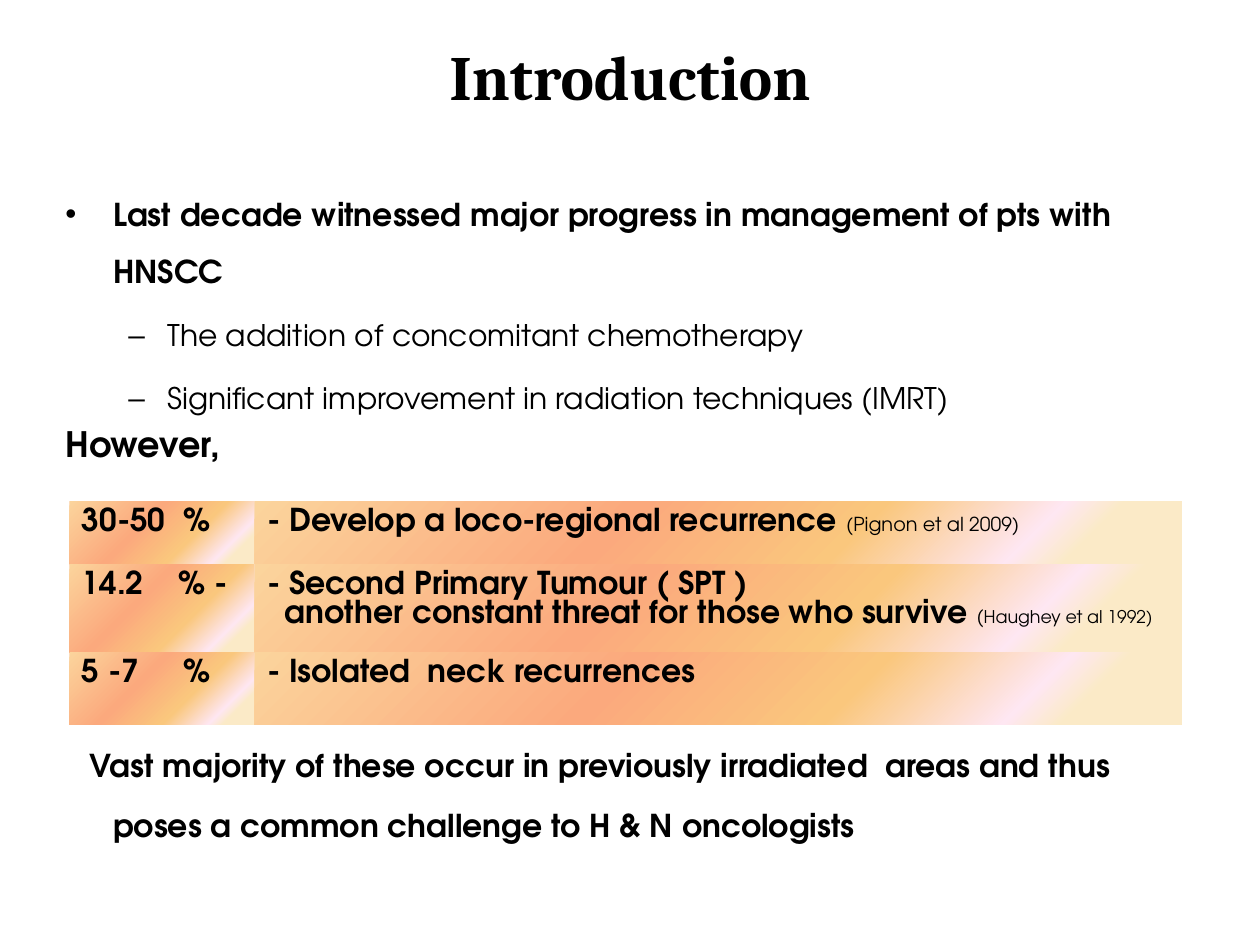
from dataclasses import dataclass

from lxml.etree import SubElement
from pptx import Presentation
from pptx.dml.color import RGBColor
from pptx.enum.text import MSO_ANCHOR, PP_ALIGN
from pptx.oxml.ns import qn
from pptx.util import Inches, Pt

BODY_FONT = "TeX Gyre Adventor"
TITLE_FONT = "Cambria"
TEXT_COLOUR = "000000"
NO_TABLE_STYLE = "{2D5ABB26-0587-4C30-8999-92F81FD0307C}"
GRADIENT_STOPS = [(12, "FBEAC7"), (18, "FEE7F2"), (36, "FAC77D"),
                  (61, "FBA97D"), (100, "FBD49C"), (100, "FEE7F2")]


@dataclass
class Piece:
    text: str
    size: float = 18
    bold: bool = True
    font: str = BODY_FONT
    tracking: float = 0


@dataclass
class Line:
    pieces: list[Piece]
    margin: float = 0
    indent: float = 0
    spacing: float = 1
    before: float = 0
    bullet: str = ""
    centred: bool = False


def colour(hex_code: str) -> RGBColor:
    return RGBColor.from_string(hex_code)


def write_line(paragraph, line: Line) -> None:
    properties = paragraph._p.get_or_add_pPr()
    properties.set("marL", str(Inches(line.margin)))
    properties.set("indent", str(Inches(line.indent)))
    if line.bullet:
        SubElement(properties, qn("a:buFont"), typeface="Arial")
        SubElement(properties, qn("a:buChar"), char=line.bullet)
    else:
        SubElement(properties, qn("a:buNone"))
    paragraph.line_spacing = line.spacing
    paragraph.space_before = Pt(line.before)
    paragraph.alignment = PP_ALIGN.CENTER if line.centred else PP_ALIGN.LEFT
    for piece in line.pieces:
        run = paragraph.add_run()
        run.text = piece.text
        run.font.name = piece.font
        run.font.size = Pt(piece.size)
        run.font.bold = piece.bold
        run.font.color.rgb = colour(TEXT_COLOUR)
        if piece.tracking:
            run._r.get_or_add_rPr().set("spc", str(int(piece.tracking * 100)))


def write_lines(text_frame, lines: list[Line]) -> None:
    for number, line in enumerate(lines):
        paragraph = text_frame.add_paragraph() if number else text_frame.paragraphs[0]
        write_line(paragraph, line)


def add_text(slide, left: float, top: float, width: float, height: float,
             lines: list[Line], anchor=MSO_ANCHOR.TOP) -> None:
    shape = slide.shapes.add_textbox(Inches(left), Inches(top), Inches(width), Inches(height))
    shape.text_frame.word_wrap = True
    shape.text_frame.vertical_anchor = anchor
    write_lines(shape.text_frame, lines)


def fill_with_gradient(cell) -> None:
    """Fill a cell with a circular gradient centred on its bottom right corner."""
    gradient = SubElement(cell._tc.get_or_add_tcPr(), qn("a:gradFill"), rotWithShape="1")
    stops = SubElement(gradient, qn("a:gsLst"))
    for percent, hex_code in GRADIENT_STOPS:
        stop = SubElement(stops, qn("a:gs"), pos=str(percent * 1000))
        SubElement(stop, qn("a:srgbClr"), val=hex_code)
    path_fill = SubElement(gradient, qn("a:path"), path="circle")
    SubElement(path_fill, qn("a:fillToRect"), l="100000", t="100000")


def add_recurrence_table(slide, rows: list[tuple[Line, list[Line]]]) -> None:
    widths, heights = [1.47, 7.36], [0.5, 0.56, 0.57]
    frame = slide.shapes.add_table(len(heights), len(widths), Inches(0.55), Inches(3.98),
                                   Inches(sum(widths)), Inches(sum(heights)))
    table = frame.table
    table.first_row = table.horz_banding = False
    table._tbl.tblPr.find(qn("a:tableStyleId")).text = NO_TABLE_STYLE
    for column, width in zip(table.columns, widths):
        column.width = Inches(width)
    for row, height, (rate_line, findings) in zip(table.rows, heights, rows):
        row.height = Inches(height)
        for cell, lines in zip(row.cells, ([rate_line], findings)):
            write_lines(cell.text_frame, lines)
            fill_with_gradient(cell)


def rate(number: str, gap: float, sign: str) -> Line:
    """Set a number and its percent sign apart by a space widened by gap points."""
    return Line([Piece(number), Piece(" ", tracking=gap), Piece(sign)])


def advance(text: str) -> Line:
    return Line([Piece(text, 17, False)], 0.81, -0.31, 1.6, 3.4, "–")


def main() -> None:
    presentation = Presentation()
    presentation.slide_width, presentation.slide_height = Inches(10), Inches(7.5)
    slide = presentation.slides.add_slide(presentation.slide_layouts[6])

    add_text(slide, 0.5, 0.16, 9, 0.87,
             [Line([Piece("Introduction", 36, font=TITLE_FONT)], centred=True)],
             MSO_ANCHOR.MIDDLE)
    add_text(slide, 0.42, 1.35, 9.08, 2.4, [
        Line([Piece("Last decade witnessed major progress in management of pts with HNSCC")],
             0.38, -0.38, 1.5, bullet="•"),
        advance("The addition of concomitant chemotherapy"),
        advance("Significant improvement in radiation techniques (IMRT)"),
        Line([Piece("However,", 20)], 0.38, -0.38, before=4),
    ])
    add_recurrence_table(slide, [
        (rate("30-50", 5, "%"),
         [Line([Piece("- Develop a loco-regional recurrence "),
                Piece("(Pignon et al 2009)", 11, False)])]),
        (rate("14.2", 15, "% -"),
         [Line([Piece("- Second Primary Tumour ( SPT )")]),
          Line([Piece("another constant threat for those who survive "),
                Piece("(", 11, False), Piece("Haughey et al 1992)", 10, False)],
               margin=0.14)]),
        (rate("5 -7", 20, "%"), [Line([Piece("- Isolated  neck recurrences")])]),
    ])
    add_text(slide, 0.42, 5.69, 9.08, 1.2, [
        Line([Piece("Vast majority of these occur in previously irradiated  areas and thus "
                    "poses a common challenge to H & N oncologists")], 0.38, -0.19, 1.6),
    ])
    presentation.save("out.pptx")


if __name__ == "__main__":
    main()
